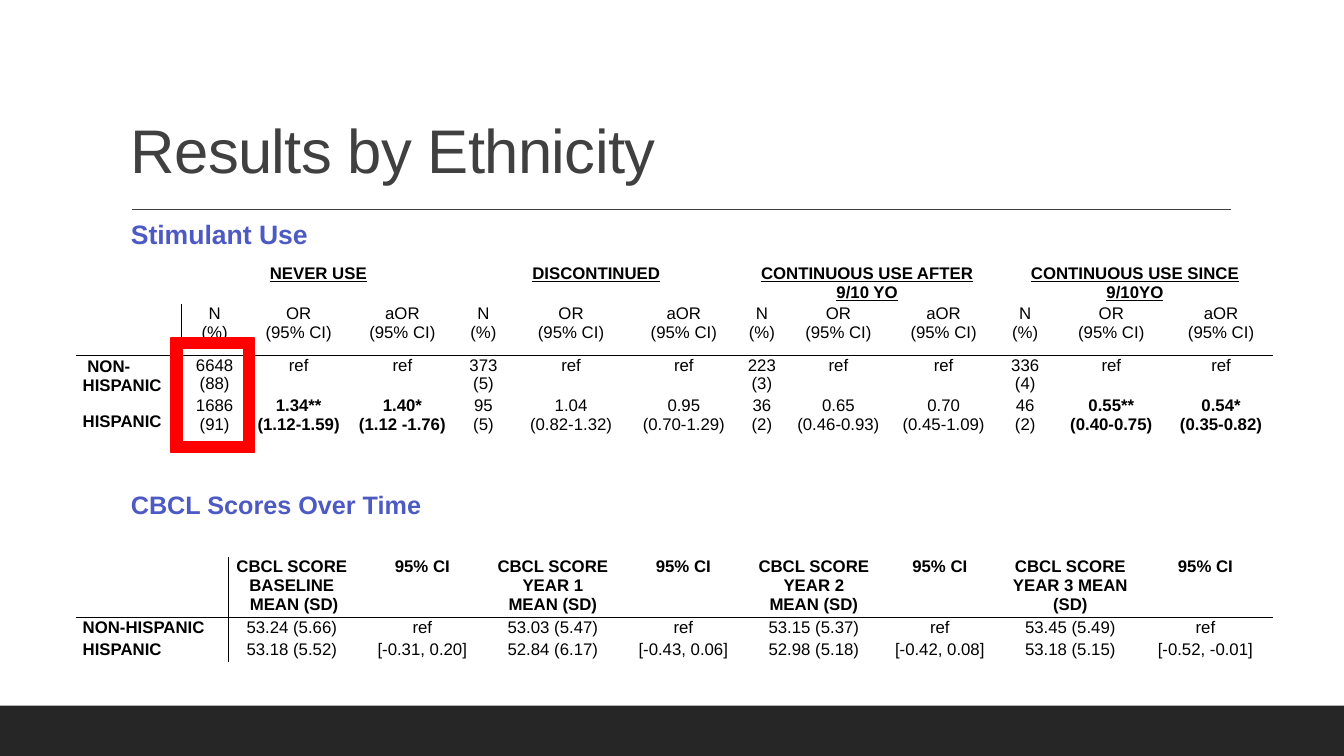
from lxml import etree
from pptx import Presentation
from pptx.dml.color import RGBColor
from pptx.enum.shapes import MSO_CONNECTOR, MSO_SHAPE
from pptx.enum.text import MSO_ANCHOR, PP_ALIGN
from pptx.oxml.ns import qn
from pptx.util import Inches, Pt

STRAIGHT = MSO_CONNECTOR.STRAIGHT
RECTANGLE, FRAME = MSO_SHAPE.RECTANGLE, MSO_SHAPE.FRAME
TOP, MIDDLE, BOTTOM = MSO_ANCHOR.TOP, MSO_ANCHOR.MIDDLE, MSO_ANCHOR.BOTTOM
LEFT, CENTER = PP_ALIGN.LEFT, PP_ALIGN.CENTER

BLACK = RGBColor(0x00, 0x00, 0x00)
CHARCOAL = RGBColor(0x26, 0x26, 0x26)
GREY = RGBColor(0x40, 0x40, 0x40)
INDIGO = RGBColor(0x4D, 0x5A, 0xC3)
RED = RGBColor(0xFF, 0x00, 0x00)

FONT = "Arial"
PLAIN_STYLE = "{2D5ABB26-0587-4C30-8999-92F81FD0307C}"
WIDTH, HEIGHT = Inches(13.333), Inches(7.5)

OR, AOR = "OR\n(95% CI)", "aOR\n(95% CI)"
USE_GROUPS = ["NEVER USE", "DISCONTINUED",
              "CONTINUOUS USE AFTER 9/10 YO", "CONTINUOUS USE SINCE 9/10YO"]
USE_COLUMNS = [1.05, 0.66, 1.01, 1.05, 0.56, 1.18, 1.06,
               0.49, 1.03, 1.06, 0.56, 1.15, 1.03]
USE_ROWS = [0.37, 0.51, 0.37, 0.5]
USE_CELLS = [
    [""] + [text for group in USE_GROUPS for text in (group, "", "")],
    ["", "N\n(%)", OR, AOR] + ["N (%)", OR, AOR] * 3,
    [" NON-HISPANIC", "6648 (88)", "ref", "ref", "373 (5)", "ref", "ref",
     "223 (3)", "ref", "ref", "336 (4)", "ref", "ref"],
    ["HISPANIC", "1686 (91)", "1.34**\n(1.12-1.59)", "1.40*\n(1.12 -1.76)",
     "95 (5)", "1.04\n(0.82-1.32)", "0.95\n(0.70-1.29)",
     "36 (2)", "0.65\n(0.46-0.93)", "0.70\n(0.45-1.09)",
     "46\n(2)", "0.55**\n(0.40-0.75)", "0.54*\n(0.35-0.82)"],
]

SCORE_PERIODS = ["BASELINE\n MEAN (SD)", "YEAR 1 MEAN (SD)",
                 "YEAR 2 MEAN (SD)", "YEAR 3 MEAN (SD)"]
SCORE_COLUMNS = [1.52, 1.25, 1.34, 1.25, 1.34, 1.25, 1.25, 1.34, 1.34]
SCORE_ROWS = [0.6, 0.22, 0.22]
SCORE_CELLS = [
    [""] + [text for period in SCORE_PERIODS
            for text in ("CBCL SCORE\n" + period, "95% CI")],
    ["NON-HISPANIC", "53.24 (5.66)", "ref", "53.03 (5.47)", "ref",
     "53.15 (5.37)", "ref", "53.45 (5.49)", "ref"],
    ["HISPANIC", "53.18 (5.52)", "[-0.31, 0.20]", "52.84 (6.17)", "[-0.43, 0.06]",
     "52.98 (5.18)", "[-0.42, 0.08]", "53.18 (5.15)", "[-0.52, -0.01]"],
]


def across(percent):
    return int(WIDTH * percent / 100)


def down(percent):
    return int(HEIGHT * percent / 100)


def place(left, top, width, height):
    return across(left), down(top), across(width), down(height)


def style_text(frame, size, color, bold=False, underline=False, align=LEFT):
    for para in frame.paragraphs:
        para.alignment = align
        for span in para.runs:
            span.font.name = FONT
            span.font.size = Pt(size)
            span.font.color.rgb = color
            span.font.bold = bold
            span.font.underline = underline


def add_text(page, area, text, size, color, bold=False, anchor=TOP):
    frame = page.shapes.add_textbox(*place(*area)).text_frame
    frame.word_wrap = True
    frame.vertical_anchor = anchor
    frame.text = text
    style_text(frame, size, color, bold)
    return frame.paragraphs[0]


def add_block(page, kind, area, color):
    block = page.shapes.add_shape(kind, *place(*area))
    block.shadow.inherit = False
    block.fill.solid()
    block.fill.fore_color.rgb = color
    return block


def add_rule(page, left, right, top):
    rule = page.shapes.add_connector(
        STRAIGHT, across(left), down(top), across(right), down(top))
    rule.line.color.rgb = GREY
    rule.line.width = Pt(1)
    etree.SubElement(rule._element.spPr, qn("a:effectLst"))


def add_borders(cell, edges):
    properties = cell._tc.get_or_add_tcPr()
    for position, edge in enumerate(edges):
        line = etree.Element(qn("a:" + edge), w=str(Pt(0.75)))
        fill = etree.SubElement(line, qn("a:solidFill"))
        etree.SubElement(fill, qn("a:srgbClr"), val=str(BLACK))
        properties.insert(position, line)


def add_grid(page, area, columns, rows, texts, header, label_anchor):
    left, top, width, height = place(*area)
    grid = page.shapes.add_table(len(rows), len(columns), left, top, width, height).table
    grid._tbl.tblPr.find(qn("a:tableStyleId")).text = PLAIN_STYLE
    grid.first_row = grid.horz_banding = False
    for column, share in zip(grid.columns, columns):
        column.width = int(width * share / sum(columns))
    for row, share in zip(grid.rows, rows):
        row.height = int(height * share / sum(rows))
    for row, line in enumerate(texts):
        for column, text in enumerate(line):
            cell = grid.cell(row, column)
            is_label = column == 0
            cell.margin_left = cell.margin_right = Inches(0.07)
            cell.margin_top = cell.margin_bottom = 0
            cell.vertical_anchor = label_anchor if is_label else TOP
            cell.text = text
            cell.fill.background()
            style_text(cell.text_frame, 12, BLACK,
                       bold=row == 0 or is_label or "*" in text,
                       underline=row < header,
                       align=LEFT if is_label else CENTER)
            edges = ["lnR"] if is_label and row >= header else []
            add_borders(cell, edges + (["lnB"] if row == header else []))
    return grid


def main():
    deck = Presentation()
    deck.slide_width, deck.slide_height = WIDTH, HEIGHT
    page = deck.slides.add_slide(deck.slide_layouts[6])

    add_block(page, RECTANGLE, (0, 93.33, 100, 6.67), CHARCOAL).line.fill.background()
    add_rule(page, 9.82, 91.58, 27.7)
    title = add_text(page, (9, 4.13, 82.5, 21.2), "Results by Ethnicity",
                     44, GREY, anchor=BOTTOM)
    title.line_spacing = 0.9
    title.runs[0].font._element.set("spc", "-50")

    use_heading = add_text(page, (9, 27.33, 38, 7.6), "Stimulant Use", 19, INDIGO, True)
    use_heading.line_spacing = 1.2
    use_heading.space_before, use_heading.space_after = Pt(12), Pt(2)
    use_grid = add_grid(page, (5.63, 34.93, 89.1, 23.33), USE_COLUMNS, USE_ROWS,
                        USE_CELLS, header=1, label_anchor=MIDDLE)
    for first in range(1, len(USE_COLUMNS), 3):
        use_grid.cell(0, first).merge(use_grid.cell(0, first + 2))
    highlight = add_block(page, FRAME, (12.75, 44.67, 6.15, 15.2), RED)
    highlight.line.color.rgb = RED
    highlight.line.width = Pt(1.25)

    add_text(page, (9, 64, 37.2, 5.33), "CBCL Scores Over Time", 18, INDIGO, True)
    add_grid(page, (5.63, 73.73, 89.1, 13.87), SCORE_COLUMNS, SCORE_ROWS,
             SCORE_CELLS, header=0, label_anchor=TOP)
    deck.save("out.pptx")


if __name__ == "__main__":
    main()
